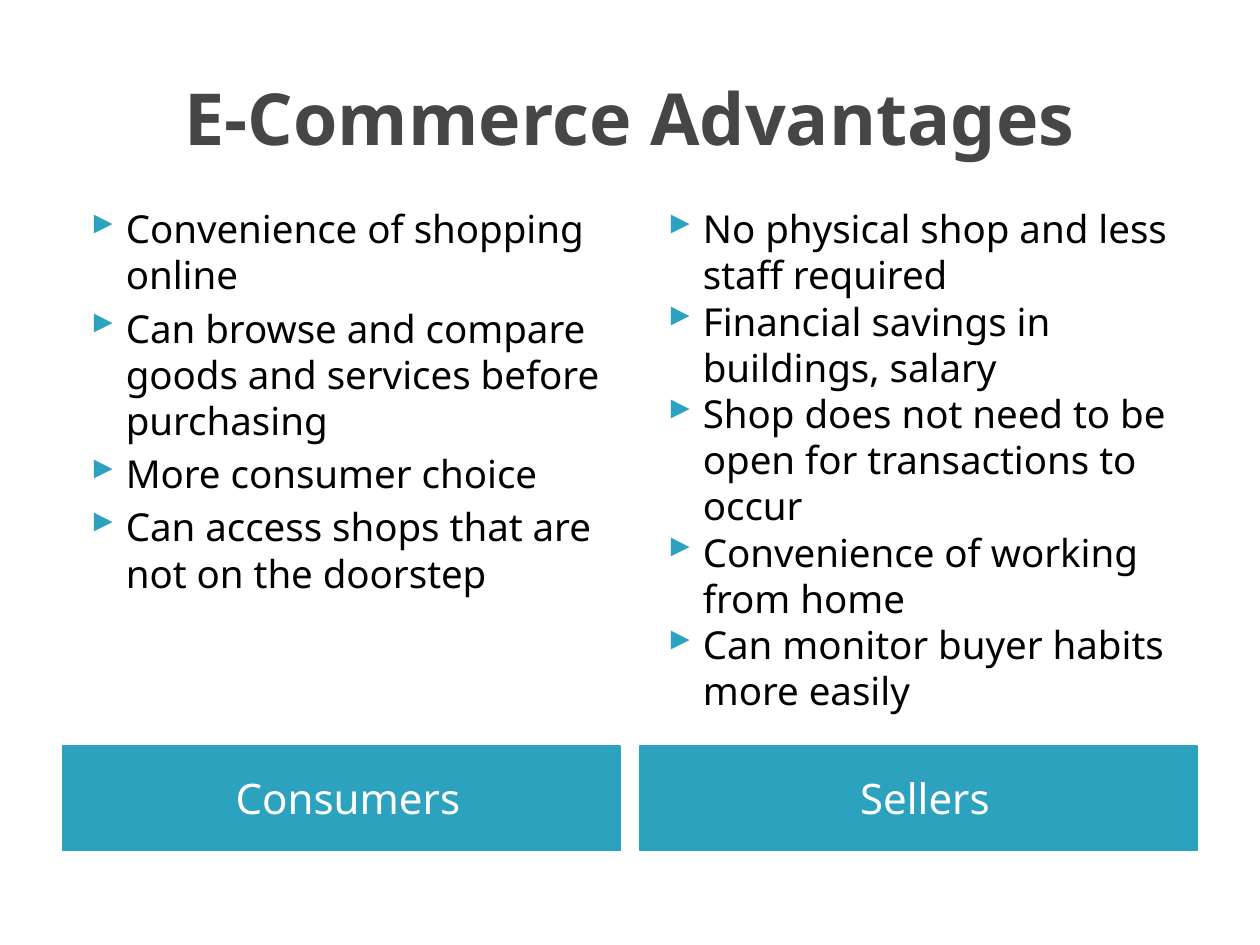
from dataclasses import dataclass

from lxml import etree
from pptx import Presentation
from pptx.dml.color import RGBColor
from pptx.enum.shapes import MSO_SHAPE
from pptx.enum.text import MSO_ANCHOR, PP_ALIGN
from pptx.oxml.ns import qn
from pptx.util import Inches, Pt

RECTANGLE = MSO_SHAPE.RECTANGLE
MIDDLE = MSO_ANCHOR.MIDDLE
CENTER = PP_ALIGN.CENTER


@dataclass(frozen=True)
class Theme:
    font: str = "Noto Sans"
    bullet_font: str = "Wingdings 3"
    accent: str = "2DA2BF"
    heading: str = "464646"
    body: str = "000000"
    label: str = "FFFFFF"
    heading_size: int = 41
    body_size: int = 22
    label_size: int = 24


theme = Theme()


def style(paragraph, size, color, bold=False):
    font = paragraph.font
    font.name = theme.font
    font.size = Pt(size)
    font.bold = bold
    font.color.rgb = RGBColor.from_string(color)


def add_bullet(paragraph):
    properties = paragraph._p.get_or_add_pPr()
    properties.set("marL", str(Inches(0.4)))
    properties.set("indent", str(Inches(-0.28)))
    bullet_color = etree.SubElement(properties, qn("a:buClr"))
    etree.SubElement(bullet_color, qn("a:srgbClr"), val=theme.accent)
    etree.SubElement(
        properties, qn("a:buFont"), typeface=theme.bullet_font, charset="2"
    )
    etree.SubElement(properties, qn("a:buChar"), char="}")


prs = Presentation()
prs.slide_width = Inches(10)
prs.slide_height = Inches(7.5)
slide = prs.slides.add_slide(prs.slide_layouts[6])

margin = 0.5
column_width = 4.42
column_step = 4.58

heading = slide.shapes.add_textbox(
    Inches(margin), Inches(0.3), Inches(9), Inches(1.25)
).text_frame
heading.word_wrap = True
heading.vertical_anchor = MIDDLE
heading.text = "E-Commerce Advantages"
heading.paragraphs[0].alignment = CENTER
style(heading.paragraphs[0], theme.heading_size, theme.heading, bold=True)

groups = [
    ("Consumers", 4, [
        "Convenience of shopping online",
        "Can browse and compare goods and services before purchasing",
        "More consumer choice",
        "Can access shops that are not on the doorstep",
    ]),
    ("Sellers", 0, [
        "No physical shop and less staff required",
        "Financial savings in buildings, salary",
        "Shop does not need to be open for transactions to occur",
        "Convenience of working from home",
        "Can monitor buyer habits more easily",
    ]),
]

for column, (group, gap, advantages) in enumerate(groups):
    left = Inches(margin + column * column_step)

    banner = slide.shapes.add_shape(
        RECTANGLE, left, Inches(5.92), Inches(column_width), Inches(0.83)
    )
    banner.shadow.inherit = False
    banner.fill.solid()
    banner.fill.fore_color.rgb = RGBColor.from_string(theme.accent)
    banner.line.color.rgb = RGBColor.from_string(theme.accent)
    banner.line.width = Pt(0.75)
    label = banner.text_frame
    label.word_wrap = True
    label.vertical_anchor = MIDDLE
    label.margin_left = Inches(0.2)
    label.text = group
    label.paragraphs[0].alignment = CENTER
    style(label.paragraphs[0], theme.label_size, theme.label)

    advantage_list = slide.shapes.add_textbox(
        left, Inches(1.58), Inches(column_width), Inches(4.31)
    ).text_frame
    advantage_list.word_wrap = True
    advantage_list.text = "\n".join(advantages)
    for index, paragraph in enumerate(advantage_list.paragraphs):
        add_bullet(paragraph)
        paragraph.space_before = Pt(gap if index else 0)
        style(paragraph, theme.body_size, theme.body)

prs.save("out.pptx")
